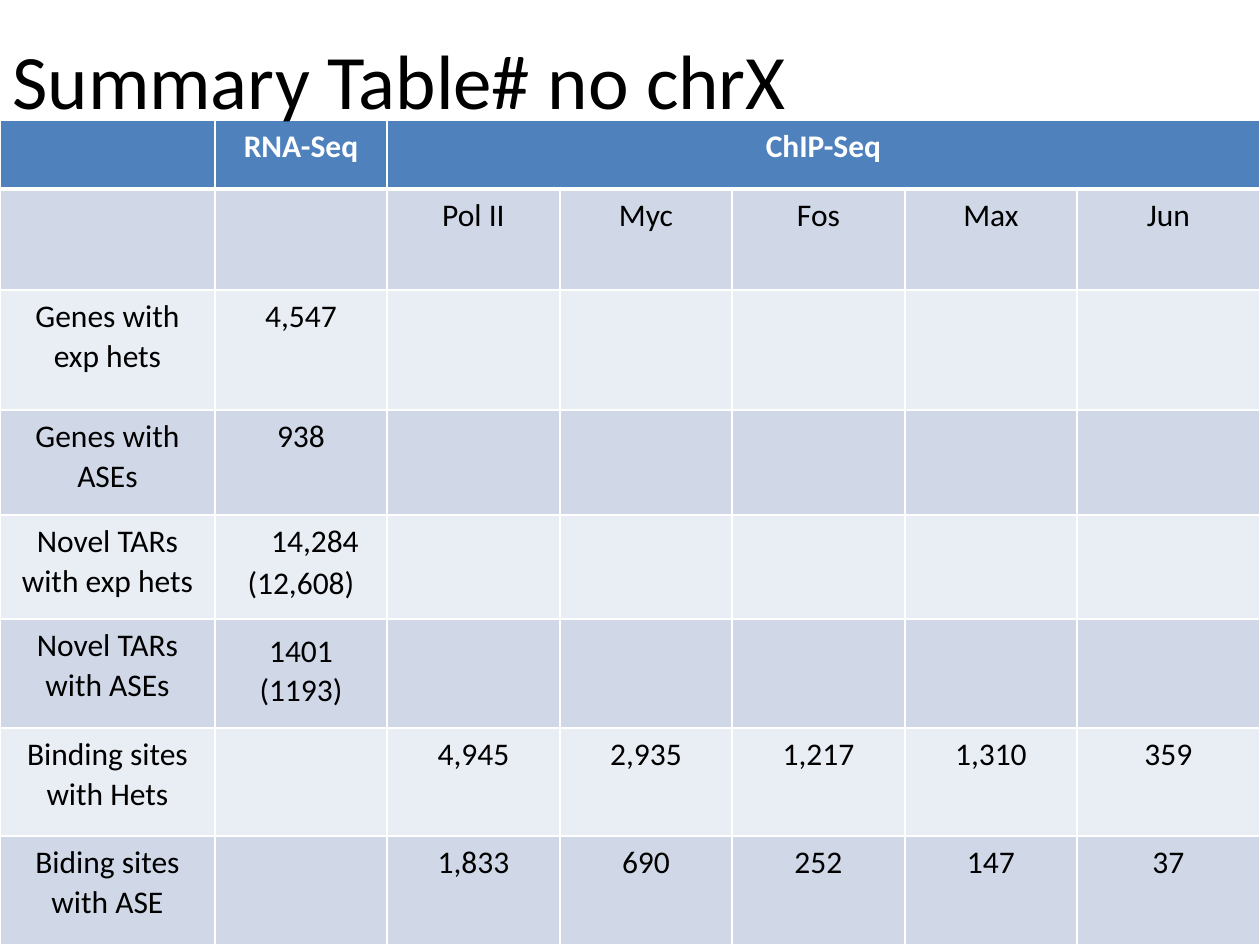
from dataclasses import dataclass
from lxml import etree
from pptx import Presentation
from pptx.dml.color import RGBColor
from pptx.enum.text import MSO_ANCHOR, PP_ALIGN
from pptx.oxml.ns import qn
from pptx.util import Emu, Pt

CENTER = PP_ALIGN.CENTER
LEFT = PP_ALIGN.LEFT
MIDDLE = MSO_ANCHOR.MIDDLE
SCALE = 914400 // 126


@dataclass
class Theme:
    font: str = "Calibri"
    ink: str = "000000"
    white: str = "FFFFFF"
    head: str = "4F81BD"
    bands: tuple = ("E9EDF4", "D0D8E8")
    title: int = 44
    body: int = 18
    thin: int = 1
    thick: int = 3


def px(n):
    return Emu(n * SCALE)


class Deck:
    """Holds the theme and the current slide, and adds elements to it."""

    def __init__(self, theme, wide, high):
        self.theme = theme
        self.prs = Presentation()
        self.prs.slide_width, self.prs.slide_height = px(wide), px(high)
        self.slide = self.prs.slides.add_slide(self.prs.slide_layouts[6])

    def label(self, frame, text, size, color, bold=False, align=LEFT, space=1.0):
        for i, line in enumerate(text.split("\n")):
            para = frame.add_paragraph() if i else frame.paragraphs[0]
            para.alignment, para.line_spacing = align, space
            run = para.add_run()
            run.text = line
            style = {"name": self.theme.font, "size": Pt(size), "bold": bold}
            for key, value in style.items():
                setattr(run.font, key, value)
            run.font.color.rgb = RGBColor.from_string(color)

    def title(self, text, left, top, wide, high):
        box = self.slide.shapes.add_textbox(px(left), px(top), px(wide), px(high))
        frame = box.text_frame
        frame.word_wrap, frame.vertical_anchor = True, MIDDLE
        self.label(frame, text, self.theme.title, self.theme.ink)

    def edge(self, cell, side, width):
        props = cell._tc.get_or_add_tcPr()
        line = etree.SubElement(props, qn(f"a:ln{side}"), w=str(Pt(width)))
        fill = etree.SubElement(line, qn("a:solidFill"))
        etree.SubElement(fill, qn("a:srgbClr"), val=self.theme.white)

    def cell(self, cell, row, text):
        theme = self.theme
        head = row == 0
        widths = {"L": theme.thin, "R": theme.thin,
                  "T": theme.thick if row == 1 else theme.thin,
                  "B": theme.thick if head else theme.thin}
        for side, width in widths.items():
            self.edge(cell, side, width)
        cell.fill.solid()
        fill = theme.head if head else theme.bands[row % 2]
        cell.fill.fore_color.rgb = RGBColor.from_string(fill)
        if text:
            color = theme.white if head else theme.ink
            self.label(cell.text_frame, text, theme.body, color, head, CENTER, 1.04)

    def table(self, rows, left, top, cols, highs):
        frame = self.slide.shapes.add_table(
            len(highs), len(cols), px(left), px(top), px(sum(cols)), px(sum(highs)))
        table = frame.table
        for col, wide in zip(table.columns, cols):
            col.width = px(wide)
        for row, high in zip(table.rows, highs):
            row.height = px(high)
        for r, texts in enumerate(rows):
            for c, text in enumerate(texts):
                self.cell(table.cell(r, c), r, text)
        return table

    def save(self):
        self.prs.save("out.pptx")


def main():
    gap = [""] * 5
    rows = [
        ["", "RNA-Seq", "ChIP-Seq", "", "", "", ""],
        ["", "", "Pol II", "Myc", "Fos", "Max", "Jun"],
        ["Genes with exp hets", "4,547", *gap],
        ["Genes with ASEs", "938", *gap],
        ["Novel TARs with exp hets", "14,284\n(12,608)", *gap],
        ["Novel TARs with ASEs", "1401\n(1193)", *gap],
        ["Binding sites with Hets", "", "4,945", "2,935", "1,217", "1,310", "359"],
        ["Biding sites with ASE", "", "1,833", "690", "252", "147", "37"],
    ]
    cols = [215, 172, 173, 172, 173, 172, 183]
    highs = [69, 101, 120, 105, 104, 109, 108, 109]
    deck = Deck(Theme(), 1260, 945)
    table = deck.table(rows, 0, 120, cols, highs)
    table.cell(0, 2).merge(table.cell(0, 6))
    novel = table.cell(4, 1).text_frame.paragraphs
    novel[0]._p.get_or_add_pPr().set("marL", str(px(28)))
    novel[1].line_spacing = 1.08
    ases = table.cell(5, 1)
    ases.margin_top = px(13)
    for para in ases.text_frame.paragraphs:
        para.line_spacing = 1.02
    deck.title("Summary Table# no chrX", 0, 0, 1134, 158)
    deck.save()


if __name__ == "__main__":
    main()
